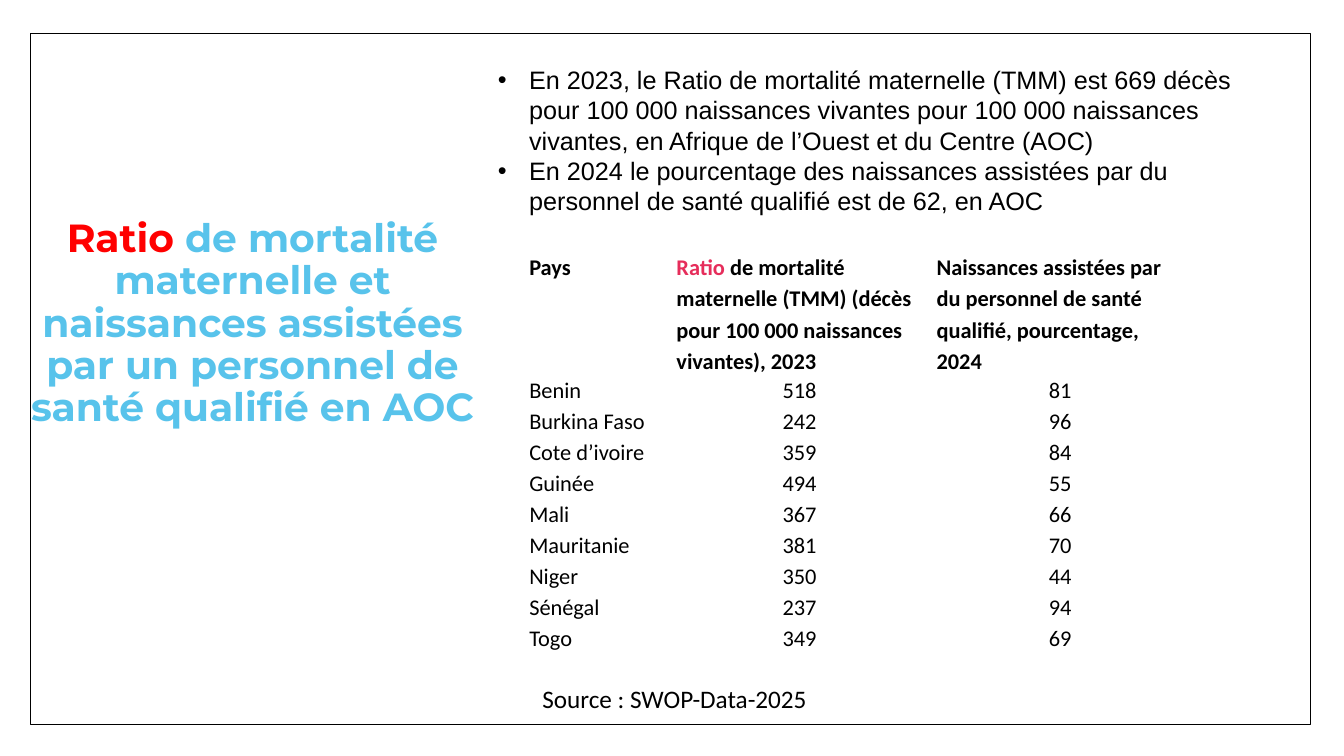
"""Build the slide on maternal mortality and assisted births in AOC."""
from typing import NamedTuple

from lxml.etree import SubElement
from pptx import Presentation
from pptx.dml.color import RGBColor
from pptx.enum.shapes import MSO_SHAPE
from pptx.enum.text import PP_ALIGN
from pptx.oxml.ns import qn
from pptx.slide import Slide
from pptx.util import Emu, Pt

PX = 9144
BLACK = RGBColor(0x00, 0x00, 0x00)
RED = RGBColor(0xFF, 0x00, 0x00)
SKY = RGBColor(0x58, 0xC3, 0xEB)
PINK = RGBColor(0xE6, 0x2D, 0x5B)


class Area(NamedTuple):
    """Place and size in px."""

    left: int
    top: int
    width: int
    height: int

    def emu(self) -> list[Emu]:
        """Return the four lengths in EMU."""
        return [px(length) for length in self]


class Span(NamedTuple):
    """Text in one colour."""

    text: str
    color: RGBColor = BLACK


class Style(NamedTuple):
    """Look of a paragraph."""

    font: str
    size: int
    bold: bool = False
    align: PP_ALIGN = PP_ALIGN.LEFT
    line_spacing: float = 1.0
    space_after: int = 0
    bullet: bool = False


class TextBlock(NamedTuple):
    """A text box with paragraphs of one style."""

    area: Area
    style: Style
    paragraphs: list[list[Span]]


class Country(NamedTuple):
    """One data row of the table."""

    name: str
    mortality: int
    assisted: int


FRAME = Area(30, 33, 1270, 686)
TABLE = Area(518, 248, 663, 383)
COLUMN_WIDTHS = (146, 258, 259)
HEADER_HEIGHT = 122
ROW_HEIGHT = 29
BULLET_INDENT = 31
CELL_MARGIN = 7

HEADER_STYLE = Style("Calibri", 16, bold=True, line_spacing=1.15, space_after=8)
NAME_STYLE = HEADER_STYLE._replace(bold=False)
NUMBER_STYLE = NAME_STYLE._replace(align=PP_ALIGN.CENTER)

TEXT_BLOCKS = [
    TextBlock(
        Area(17, 212, 467, 263),
        Style("Montserrat", 28, bold=True, align=PP_ALIGN.CENTER, line_spacing=0.9),
        [[
            Span("Ratio", RED),
            Span(" de mortalité maternelle et naissances assistées "
                 "par un personnel de santé qualifié en AOC", SKY),
        ]],
    ),
    TextBlock(
        Area(484, 59, 793, 162),
        Style("Arial", 18, bullet=True),
        [
            [Span("En 2023, le Ratio de mortalité maternelle (TMM) est 669 décès "
                  "pour 100 000 naissances vivantes pour 100 000 naissances "
                  "vivantes, en Afrique de l’Ouest et du Centre (AOC)")],
            [Span("En 2024 le pourcentage des naissances assistées par du "
                  "personnel de santé qualifié est de 62, en AOC")],
        ],
    ),
    TextBlock(
        Area(528, 673, 322, 40),
        Style("Calibri", 18),
        [[Span("Source : SWOP-Data-2025")]],
    ),
]

HEADERS = [
    [Span("Pays")],
    [
        Span("Ratio ", PINK),
        Span("de mortalité maternelle (TMM) (décès "
             "pour 100 000 naissances vivantes), 2023"),
    ],
    [Span("Naissances assistées par du personnel de santé qualifié, "
          "pourcentage, 2024")],
]

COUNTRIES = [
    Country("Benin", 518, 81),
    Country("Burkina Faso", 242, 96),
    Country("Cote d’ivoire", 359, 84),
    Country("Guinée", 494, 55),
    Country("Mali", 367, 66),
    Country("Mauritanie", 381, 70),
    Country("Niger", 350, 44),
    Country("Sénégal", 237, 94),
    Country("Togo", 349, 69),
]


def px(length: int) -> Emu:
    """Turn px into EMU."""
    return Emu(length * PX)


def write_paragraph(paragraph, spans: list[Span], style: Style) -> None:
    """Fill a paragraph with coloured spans in one style."""
    paragraph.alignment = style.align
    paragraph.line_spacing = style.line_spacing
    paragraph.space_after = Pt(style.space_after)
    if style.bullet:
        properties = paragraph._p.get_or_add_pPr()
        properties.set("marL", str(px(BULLET_INDENT)))
        properties.set("indent", str(-px(BULLET_INDENT)))
        SubElement(properties, qn("a:buFont"), typeface="Arial")
        SubElement(properties, qn("a:buChar"), char="•")
    paragraph.font.name = style.font
    paragraph.font.size = Pt(style.size)
    paragraph.font.bold = style.bold
    for span in spans:
        run = paragraph.add_run()
        run.text = span.text
        run.font.color.rgb = span.color


def draw_frame(page: Slide) -> None:
    """Draw the thin border around the slide."""
    frame = page.shapes.add_shape(MSO_SHAPE.RECTANGLE, *FRAME.emu())
    frame.shadow.inherit = False
    frame.fill.background()
    frame.line.color.rgb = BLACK
    frame.line.width = Pt(0.75)


def draw_text(page: Slide, block: TextBlock) -> None:
    """Draw a text box."""
    text_frame = page.shapes.add_textbox(*block.area.emu()).text_frame
    text_frame.word_wrap = True
    for index, spans in enumerate(block.paragraphs):
        paragraph = text_frame.add_paragraph() if index else text_frame.paragraphs[0]
        write_paragraph(paragraph, spans, block.style)


def draw_table(page: Slide) -> None:
    """Draw the table of countries."""
    rows = [HEADERS] + [[[Span(str(value))] for value in country] for country in COUNTRIES]
    table = page.shapes.add_table(len(rows), len(HEADERS), *TABLE.emu()).table
    table.first_row = False
    table.horz_banding = False
    for column, width in zip(table.columns, COLUMN_WIDTHS):
        column.width = px(width)
    for row_index, row in enumerate(rows):
        table.rows[row_index].height = px(ROW_HEIGHT if row_index else HEADER_HEIGHT)
        for column_index, spans in enumerate(row):
            cell = table.cell(row_index, column_index)
            cell.fill.background()
            cell.margin_left = cell.margin_right = px(CELL_MARGIN)
            cell.margin_top = cell.margin_bottom = 0
            body_style = NUMBER_STYLE if column_index else NAME_STYLE
            style = body_style if row_index else HEADER_STYLE
            write_paragraph(cell.text_frame.paragraphs[0], spans, style)


def main() -> None:
    """Build and save the deck."""
    deck = Presentation()
    deck.slide_width, deck.slide_height = px(1333), px(750)
    page = deck.slides.add_slide(deck.slide_layouts[6])
    draw_frame(page)
    for block in TEXT_BLOCKS:
        draw_text(page, block)
    draw_table(page)
    deck.save("out.pptx")


if __name__ == "__main__":
    main()
